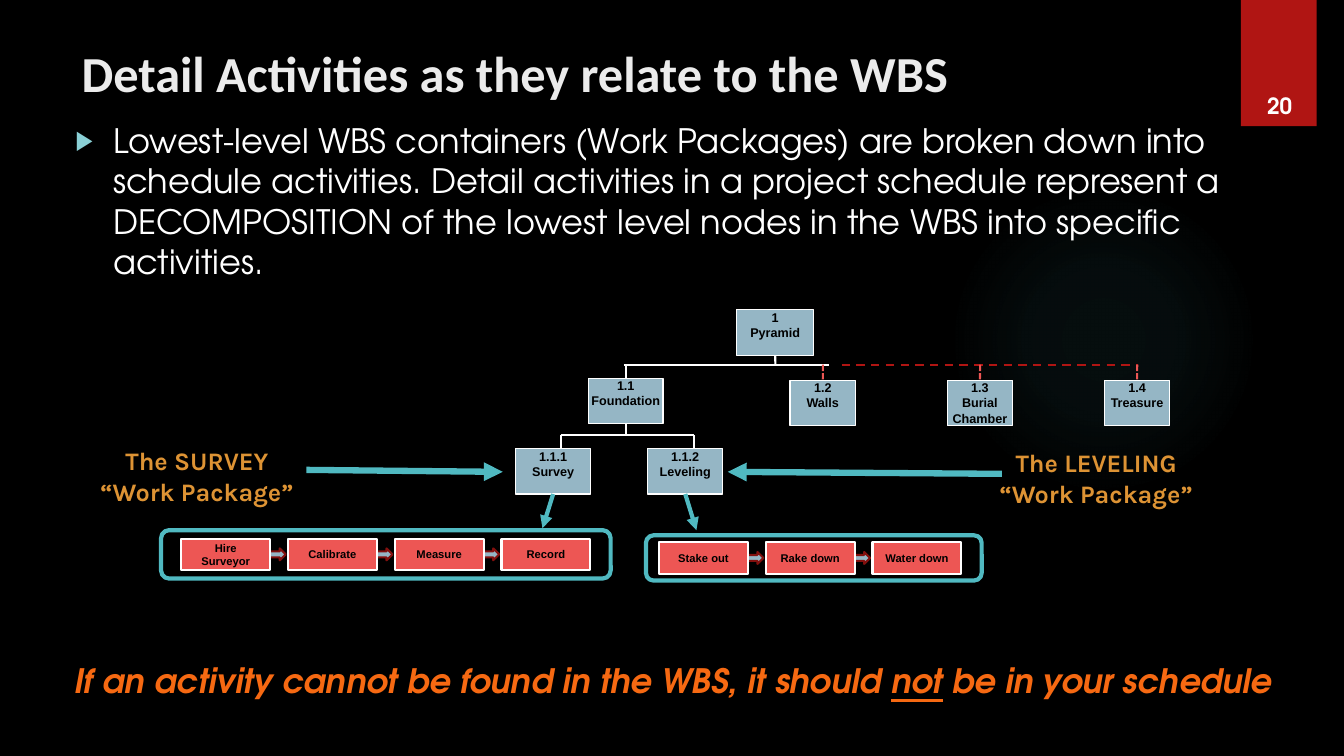
import pptx
import pptx.util
import pptx.dml.color
import pptx.oxml.ns
import pptx.oxml.xmlchemy
from pptx.enum.dml import MSO_LINE
from pptx.enum.shapes import MSO_CONNECTOR, MSO_SHAPE
from pptx.enum.text import MSO_ANCHOR, PP_ALIGN

Cm, Pt = pptx.util.Cm, pptx.util.Pt
TEAL, WHITE, STEEL, RED, CORAL = "50B9C1", "FFFFFF", "95B6C5", "B01513", "ED5654"
BODY_FONT = "TeX Gyre Adventor"
NODE_HEIGHT = 1.15


def colour(hex_code):
    return pptx.dml.color.RGBColor.from_string(hex_code)


def add_xml(parent, tag, **attributes):
    child = pptx.oxml.xmlchemy.OxmlElement(tag)
    for name, value in attributes.items():
        child.set(name, str(value))
    parent.append(child)
    return child


def style_paragraph(para, size, font, hex_code, align=PP_ALIGN.LEFT, bold=False, italic=False):
    para.alignment = align
    para.font.size = Pt(size)
    para.font.name = font
    para.font.color.rgb = colour(hex_code)
    para.font.bold = bold
    para.font.italic = italic


def write(shape, lines, *style, anchor=MSO_ANCHOR.TOP, inset=None):
    """Fill a shape with one paragraph per line, all in the same style."""
    frame = shape.text_frame
    frame.word_wrap = True
    frame.vertical_anchor = anchor
    if inset is not None:
        frame.margin_left = frame.margin_right = Cm(inset)
        frame.margin_top = frame.margin_bottom = Cm(inset)
    frame.text = "\n".join(lines)
    for para in frame.paragraphs:
        style_paragraph(para, *style)


def add_text(page, box):
    return page.shapes.add_textbox(*(Cm(length) for length in box))


def add_block(page, kind, box, fill=None, line=None, width=0):
    block = page.shapes.add_shape(kind, *(Cm(length) for length in box))
    block.shadow.inherit = False
    if fill:
        block.fill.solid()
        block.fill.fore_color.rgb = colour(fill)
    else:
        block.fill.background()
    if line:
        block.line.color.rgb = colour(line)
        block.line.width = Pt(width)
    else:
        block.line.fill.background()
    return block


def add_line(page, start, end, hex_code=WHITE, width=1.5, dash=None, arrow=False,
             above=None, below=None):
    """Draw a line, joined to the bottom of node `above` and the top of node `below`."""
    line = page.shapes.add_connector(
        MSO_CONNECTOR.STRAIGHT, *(Cm(length) for length in (*start, *end)))
    line.line.color.rgb = colour(hex_code)
    line.line.width = Pt(width)
    if dash:
        line.line.dash_style = dash
    if arrow:
        add_xml(line.line._get_or_add_ln(), "a:tailEnd", type="triangle")
    add_xml(line._element.spPr, "a:effectLst")
    if above is not None:
        line.begin_connect(above, 2)
    if below is not None:
        line.end_connect(below, 0)
    return line


def add_backdrop(page):
    page.background.fill.solid()
    page.background.fill.fore_color.rgb = colour("000000")
    glow = add_block(page, MSO_SHAPE.OVAL, (23.9, 4.65, 7.82, 7.82))
    properties = glow._element.spPr
    gradient = pptx.oxml.xmlchemy.OxmlElement("a:gradFill")
    stops = add_xml(gradient, "a:gsLst")
    for position, alpha in ((0, 7), (36, 6), (69, 0)):
        stop = add_xml(stops, "a:gs", pos=position * 1000)
        tint = add_xml(stop, "a:srgbClr", val=TEAL)
        add_xml(tint, "a:alpha", val=alpha * 1000)
    circle = add_xml(gradient, "a:path", path="circle")
    add_xml(circle, "a:fillToRect", l=50000, t=50000, r=50000, b=50000)
    properties.replace(properties.find(pptx.oxml.ns.qn("a:noFill")), gradient)


def add_page_tab(page, box):
    left, top, width, height = box
    add_block(page, MSO_SHAPE.RECTANGLE, box, RED)
    number = add_text(page, (left + 0.23, top + 2.11, 1.5, 1.02))
    write(number, ["20"], 16, BODY_FONT, WHITE, PP_ALIGN.CENTER, True, anchor=MSO_ANCHOR.BOTTOM)


def add_title(page, box):
    title = page.shapes.title
    title.left, title.top, title.width, title.height = (Cm(length) for length in box)
    write(title, ["Detail Activities as they relate to the WBS"],
          36, "Calibri", "EBEBEB", PP_ALIGN.LEFT, True, anchor=MSO_ANCHOR.MIDDLE)


def add_explanation(page, box):
    text = add_text(page, box)
    para = text.text_frame.paragraphs[0]
    para.text = ("Lowest-level WBS containers (Work Packages) are broken down into schedule "
                 "activities. Detail activities in a project schedule represent a DECOMPOSITION "
                 "of the lowest level nodes in the WBS into specific activities.")
    text.text_frame.word_wrap = True
    properties = para._p.get_or_add_pPr()
    properties.set("marL", str(Cm(0.95)))
    properties.set("indent", str(-Cm(0.95)))
    add_xml(add_xml(properties, "a:buClr"), "a:srgbClr", val="8AD0D6")
    add_xml(properties, "a:buSzPct", val=80000)
    add_xml(properties, "a:buFont", typeface="Arial")
    add_xml(properties, "a:buChar", char="▶")
    style_paragraph(para, 24, BODY_FONT, WHITE)


def add_node(page, left, top, width, *lines):
    node = add_block(page, MSO_SHAPE.RECTANGLE, (left, top, width, NODE_HEIGHT),
                     STEEL, WHITE, 0.75)
    write(node, lines, 9, "Arial", "000000", PP_ALIGN.CENTER, True, inset=0)
    return node


def add_wbs_tree(page, left, top):
    """Draw the tree and return its two work package nodes."""
    upper_bus, lower_bus = top + 1.39, top + 3.17
    root = add_node(page, left + 5.57, top, 1.93, "1", "Pyramid")
    foundation = add_node(page, left + 1.83, top + 1.73, 1.88, "1.1", "Foundation")
    add_line(page, (left + 6.54, top + NODE_HEIGHT), (left + 6.54, upper_bus), above=root)
    add_line(page, (left + 2.72, upper_bus), (left + 7.88, upper_bus))
    add_line(page, (left + 8.21, upper_bus), (left + 15.68, upper_bus), RED, dash=MSO_LINE.DASH)
    add_line(page, (left + 2.77, upper_bus), (left + 2.77, top + 1.73), below=foundation)

    siblings = (("1.2", "Walls"), ("1.3", "Burial", "Chamber"), ("1.4", "Treasure"))
    for index, lines in enumerate(siblings):
        node_left = left + 6.91 + 3.96 * index
        node = add_node(page, node_left, top + 1.78, 1.65, *lines)
        middle = node_left + 0.83
        add_line(page, (middle, upper_bus), (middle, top + 1.78), CORAL,
                 dash=MSO_LINE.SQUARE_DOT, below=node)

    add_line(page, (left + 2.77, top + 2.88), (left + 2.77, lower_bus), above=foundation)
    add_line(page, (left + 1.13, lower_bus), (left + 4.5, lower_bus))
    for drop in (1.13, 4.5):
        add_line(page, (left + drop, lower_bus), (left + drop, top + 3.5))
    survey = add_node(page, left, top + 3.5, 1.88, "1.1.1", "Survey")
    leveling = add_node(page, left + 3.33, top + 3.5, 1.88, "1.1.2", "Leveling")
    return survey, leveling


def add_work_package(page, box, inset, activities, node, arrow_end):
    """Frame a chain of activities and point to it from its WBS node."""
    left, top, width, height = box
    step, activity_width, activity_height = 2.69, 2.24, 0.79
    middle = top + height / 2
    lefts = [left + inset + step * index for index in range(len(activities))]
    for activity_left in lefts[:-1]:
        add_block(page, MSO_SHAPE.RIGHT_ARROW,
                  (activity_left + activity_width - 0.14, middle - 0.15, 0.53, 0.3),
                  STEEL, "82100E", 1.5)
    for activity_left, name in zip(lefts, activities):
        activity = add_block(
            page, MSO_SHAPE.RECTANGLE,
            (activity_left, middle - activity_height / 2, activity_width, activity_height),
            CORAL, WHITE, 1.5)
        write(activity, [name], 8, "Arial", "000000", PP_ALIGN.CENTER, True,
              anchor=MSO_ANCHOR.MIDDLE)
    add_block(page, MSO_SHAPE.ROUNDED_RECTANGLE, box, None, TEAL, 3)
    add_line(page, arrow_end, arrow_end, TEAL, 3, arrow=True, above=node)


def add_callout(page, box, words, start, end):
    add_line(page, start, end, TEAL, 4.5, arrow=True)
    write(add_text(page, box), [words], 18, "Karla", "DD9334", PP_ALIGN.CENTER, True, inset=0)


def add_conclusion(page, box):
    text = add_text(page, box)
    text.text_frame.word_wrap = True
    para = text.text_frame.paragraphs[0]
    for words in ("If an activity cannot be found in the WBS, it should ", "not",
                  " be in your schedule"):
        span = para.add_run()
        span.text = words
        if words == "not":
            span.font.underline = True
    style_paragraph(para, 24, BODY_FONT, "F66912", bold=True, italic=True)


def main():
    deck = pptx.Presentation()
    deck.slide_width, deck.slide_height = Cm(33.87), Cm(19.05)
    page = deck.slides.add_slide(deck.slide_layouts[5])
    add_backdrop(page)
    add_page_tab(page, (31.27, 0, 1.91, 3.18))
    add_title(page, (1.8, 0.84, 32.05, 1.98))
    add_explanation(page, (1.65, 2.9, 30.4, 5.38))
    survey, leveling = add_wbs_tree(page, 13, 7.8)
    add_work_package(page, (4.06, 13.36, 11.33, 1.22), 0.51,
                     ("Hire Surveyor", "Calibrate", "Measure", "Record"), survey, (13.67, 13.31))
    add_work_package(page, (16.28, 13.49, 8.46, 1.14), 0.33,
                     ("Stake out", "Rake down", "Water down"), leveling, (17.55, 13.36))
    add_callout(page, (2.36, 11.23, 5.21, 1.55), "The SURVEY “Work Package”",
                (7.72, 11.84), (12.67, 11.89))
    add_callout(page, (25.02, 11.28, 5.21, 1.55), "The LEVELING “Work Package”",
                (25.25, 11.94), (18.34, 11.89))
    add_conclusion(page, (1.63, 16.51, 31.2, 1.27))
    deck.save("out.pptx")


if __name__ == "__main__":
    main()
